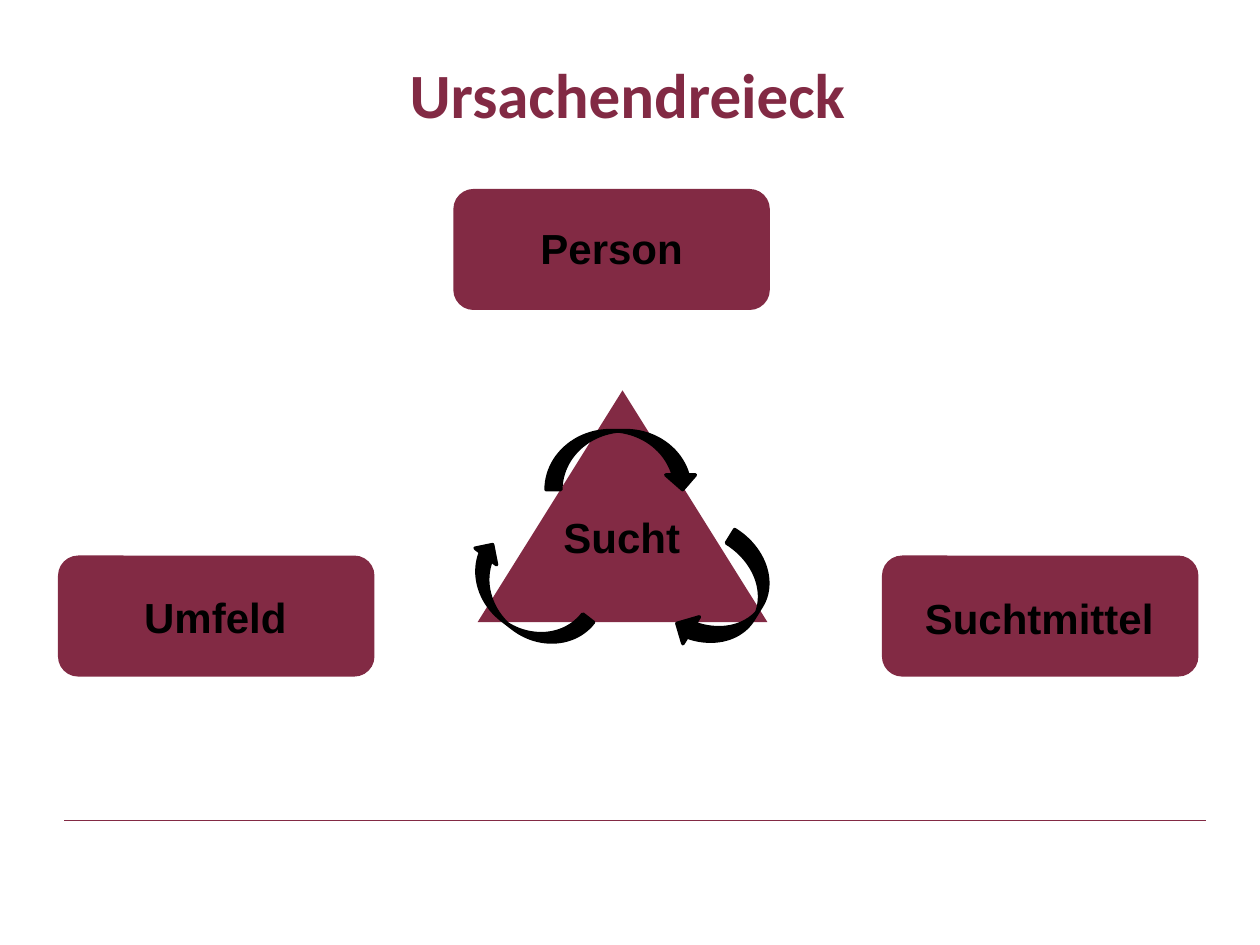
from lxml.etree import SubElement
from pptx import Presentation
from pptx.dml.color import RGBColor
from pptx.enum.shapes import MSO_CONNECTOR, MSO_SHAPE
from pptx.enum.text import MSO_ANCHOR, MSO_AUTO_SIZE, PP_ALIGN
from pptx.oxml.ns import qn
from pptx.util import Cm, Pt

HUES = {"wine": "822A44", "black": "000000"}


def add_form(kind, spot, hue):
    form = slide.shapes.add_shape(kind, *map(Cm, spot))
    form.shadow.inherit = False
    form.fill.solid()
    form.fill.fore_color.rgb = RGBColor.from_string(HUES[hue])
    form.line.fill.background()
    return form


def add_words(frame, words, face, size, hue):
    para = frame.paragraphs[0]
    para.alignment = PP_ALIGN.CENTER
    run = para.add_run()
    run.text = words
    run.font.name = face
    run.font.size = Pt(size)
    run.font.bold = True
    run.font.color.rgb = RGBColor.from_string(HUES[hue])


deck = Presentation()
deck.slide_width, deck.slide_height = Cm(25.4), Cm(19.05)
slide = deck.slides.add_slide(deck.slide_layouts[5])

title = slide.shapes.title
title.left, title.top, title.width, title.height = map(Cm, (1.7, 0.64, 21.9, 2.49))
title.text_frame.vertical_anchor = MSO_ANCHOR.MIDDLE
add_words(title.text_frame, "Ursachendreieck", "Calibri", 36, "wine")

rule = slide.shapes.add_connector(
    MSO_CONNECTOR.STRAIGHT, Cm(1.3), Cm(16.54), Cm(24.31), Cm(16.54))
rule.line.color.rgb = RGBColor.from_string(HUES["wine"])
rule.line.width = Pt(1)
SubElement(rule.element.spPr, qn("a:effectLst"))

add_form(MSO_SHAPE.ISOSCELES_TRIANGLE, (9.63, 7.87, 5.84, 4.67), "wine")

for left, top in [(9.14, 3.81), (17.78, 11.2), (1.17, 11.2)]:
    add_form(MSO_SHAPE.ROUNDED_RECTANGLE, (left, top, 6.38, 2.44), "wine")

arrows = [
    (14.05, 10.82, 1.27, 2.54, 31.6),
    (11.94, 7.75, 1.19, 3.05, 270),
    (9.96, 10.69, 1.09, 2.84, 127.6),
]
for *spot, turn in arrows:
    arrow = add_form(MSO_SHAPE.CURVED_LEFT_ARROW, spot, "black")
    arrow.rotation = turn
    arrow.line.color.rgb = RGBColor.from_string(HUES["black"])
    arrow.line.width = Pt(2)

labels = [
    ("Person", 10.64, 4.37, 3.38),
    ("Umfeld", 2.36, 11.79, 3.96),
    ("Suchtmittel", 18.08, 11.81, 5.74),
    ("Sucht", 10.82, 10.19, 3.43),
]
for words, left, top, width in labels:
    label = slide.shapes.add_textbox(Cm(left), Cm(top), Cm(width), Cm(1.27))
    label.text_frame.word_wrap = True
    label.text_frame.auto_size = MSO_AUTO_SIZE.SHAPE_TO_FIT_TEXT
    add_words(label.text_frame, words, "Arial", 24, "black")

deck.save("out.pptx")
